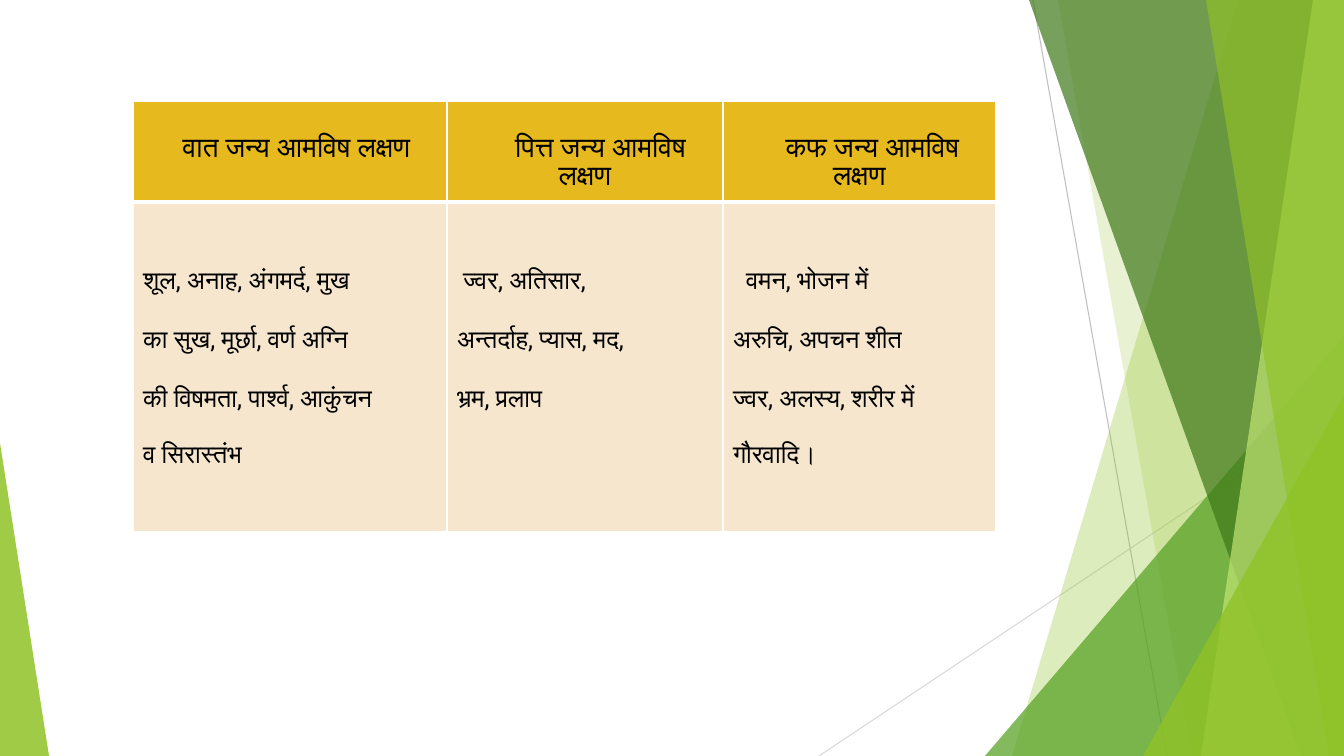
"""Build a slide with a three-column table of symptoms beside green facets."""
from dataclasses import dataclass

from lxml import etree
from pptx import Presentation
from pptx.dml.color import RGBColor
from pptx.enum.shapes import MSO_CONNECTOR, MSO_SHAPE
from pptx.enum.text import PP_ALIGN
from pptx.oxml.ns import qn
from pptx.util import Emu, Pt

STRAIGHT = MSO_CONNECTOR.STRAIGHT
TRIANGLE = MSO_SHAPE.ISOSCELES_TRIANGLE
LEFT, CENTER = PP_ALIGN.LEFT, PP_ALIGN.CENTER
SLIDE_W, SLIDE_H = 1344, 756
SCALE = 12192000 / SLIDE_W
BLANK_LAYOUT = 6


@dataclass(frozen=True)
class Theme:
    font: str = "Roboto"
    text: str = "000000"
    border: str = "FFFFFF"
    header: str = "E6B91E"
    body: str = "F5E6CD"
    lime: str = "90C226"
    pale: str = "C0E474"
    green: str = "54A021"
    dark: str = "3F7819"
    header_pt: int = 20
    body_pt: int = 18
    gap_pt: int = 21
    last_gap_pt: int = 19


@dataclass(frozen=True)
class Ray:
    x1: int
    y1: int
    x2: int
    y2: int
    color: str


@dataclass(frozen=True)
class Facet:
    top_x: int
    bottom_x: int
    color: str
    alpha: int


@dataclass(frozen=True)
class Corner:
    x: int
    y: int
    w: int
    apex: int
    color: str
    alpha: int


@dataclass(frozen=True)
class Column:
    width: int
    title: str
    title_indent: int
    lines: tuple[str, ...]
    first_indent: int


THEME = Theme()
RAYS = (Ray(1033, 0, 1167, SLIDE_H, "BFBFBF"),
        Ray(SLIDE_W, 406, 819, SLIDE_H, "D9D9D9"))
DECOR = (
    Facet(1238, 1012, THEME.lime, 30),
    Facet(1058, 1192, THEME.lime, 20),
    Corner(985, 336, 359, 1, THEME.green, 72),
    Facet(1029, 1301, THEME.dark, 70),
    Facet(1313, 1201, THEME.pale, 70),
    Facet(1206, 1329, THEME.lime, 65),
    Corner(1143, 396, 201, 1, THEME.lime, 80),
    Corner(0, 443, 49, 0, THEME.lime, 85),
)
COLUMNS = (
    Column(314, "वात जन्य आमविष लक्षण", 13,
           ("शूल, अनाह, अंगमर्द, मुख", "का सुख, मूर्छा, वर्ण अग्नि",
            "की विषमता, पार्श्व, आकुंचन", "व सिरास्तंभ"), 0),
    Column(276, "पित्त जन्य आमविष लक्षण", 31,
           ("ज्वर, अतिसार,", "अन्तर्दाह, प्यास, मद,", "भ्रम, प्रलाप"), 6),
    Column(273, "कफ जन्य आमविष लक्षण", 26,
           ("वमन, भोजन में", "अरुचि, अपचन शीत",
            "ज्वर, अलस्य, शरीर में", "गौरवादि।"), 13),
)
TABLE_X, TABLE_Y = 133, 101
ROW_HEIGHTS = (101, 330)
HEADER_TOP, BODY_TOP = 35, 64


def px(n: int) -> Emu:
    return Emu(round(n * SCALE))


def rgb(color: str) -> RGBColor:
    return RGBColor.from_string(color)


def set_fill(sp, color: str, alpha: int) -> None:
    sp.shadow.inherit = False
    sp.line.fill.background()
    sp.fill.solid()
    sp.fill.fore_color.rgb = rgb(color)
    clr = sp.fill._xPr.find(qn("a:solidFill"))[0]
    etree.SubElement(clr, qn("a:alpha")).set("val", str(alpha * 1000))


def draw_ray(shapes, ray: Ray) -> None:
    ends = (px(n) for n in (ray.x1, ray.y1, ray.x2, ray.y2))
    line = shapes.add_connector(STRAIGHT, *ends)
    line.line.color.rgb = rgb(ray.color)
    line.line.width = Pt(0.75)
    etree.SubElement(line._element.spPr, qn("a:effectLst"))


def draw_facet(shapes, facet: Facet) -> None:
    fb = shapes.build_freeform(facet.top_x, 0, scale=SCALE)
    fb.add_line_segments(((SLIDE_W, 0), (SLIDE_W, SLIDE_H),
                          (facet.bottom_x, SLIDE_H)), close=True)
    set_fill(fb.convert_to_shape(), facet.color, facet.alpha)


def draw_corner(shapes, corner: Corner) -> None:
    sp = shapes.add_shape(TRIANGLE, px(corner.x), px(corner.y),
                          px(corner.w), px(SLIDE_H - corner.y))
    sp.adjustments[0] = corner.apex
    set_fill(sp, corner.color, corner.alpha)


def set_borders(cell, bottom_pt: int) -> None:
    tc_pr = cell._tc.get_or_add_tcPr()
    for i, (side, width) in enumerate({"L": 1, "R": 1, "T": 1, "B": bottom_pt}.items()):
        ln = etree.Element(qn(f"a:ln{side}"), w=str(Pt(width)))
        fill = etree.SubElement(ln, qn("a:solidFill"))
        etree.SubElement(fill, qn("a:srgbClr")).set("val", THEME.border)
        tc_pr.insert(i, ln)


def format_cell(cell, fill: str, top: int, bottom_pt: int) -> None:
    cell.fill.solid()
    cell.fill.fore_color.rgb = rgb(fill)
    cell.margin_top = px(top)
    set_borders(cell, bottom_pt)


def write(p, text: str, size: int, indent: int, formats: dict) -> None:
    for name, value in formats.items():
        setattr(p, name, value)
    p_pr = p._p.get_or_add_pPr()
    p_pr.set("marL", "0")
    p_pr.set("indent", str(px(indent)))
    r = p.add_run()
    r.text = text
    for name, value in {"name": THEME.font, "size": Pt(size), "bold": False}.items():
        setattr(r.font, name, value)
    r.font.color.rgb = rgb(THEME.text)
    etree.SubElement(r._r.get_or_add_rPr(), qn("a:cs")).set("typeface", THEME.font)


def draw_table(shapes) -> None:
    width = sum(c.width for c in COLUMNS)
    table = shapes.add_table(len(ROW_HEIGHTS), len(COLUMNS), px(TABLE_X), px(TABLE_Y),
                             px(width), px(sum(ROW_HEIGHTS))).table
    for row, height in zip(table.rows, ROW_HEIGHTS):
        row.height = px(height)
    for i, column in enumerate(COLUMNS):
        table.columns[i].width = px(column.width)
        head, body = table.cell(0, i), table.cell(1, i)
        format_cell(head, THEME.header, HEADER_TOP, 3)
        format_cell(body, THEME.body, BODY_TOP, 1)
        write(head.text_frame.paragraphs[0], column.title, THEME.header_pt,
              column.title_indent,
              {"alignment": CENTER, "line_spacing": Pt(THEME.header_pt)})
        tf = body.text_frame
        gaps = (0, THEME.gap_pt, THEME.gap_pt, THEME.last_gap_pt)
        for j, (text, gap) in enumerate(zip(column.lines, gaps)):
            p = tf.add_paragraph() if j else tf.paragraphs[0]
            write(p, text, THEME.body_pt, 0 if j else column.first_indent,
                  {"alignment": LEFT, "space_before": Pt(gap)})


def main() -> None:
    prs = Presentation()
    prs.slide_width, prs.slide_height = px(SLIDE_W), px(SLIDE_H)
    shapes = prs.slides.add_slide(prs.slide_layouts[BLANK_LAYOUT]).shapes
    draw = {Ray: draw_ray, Facet: draw_facet, Corner: draw_corner}
    for item in RAYS + DECOR:
        draw[type(item)](shapes, item)
    draw_table(shapes)
    prs.save("out.pptx")


if __name__ == "__main__":
    main()
